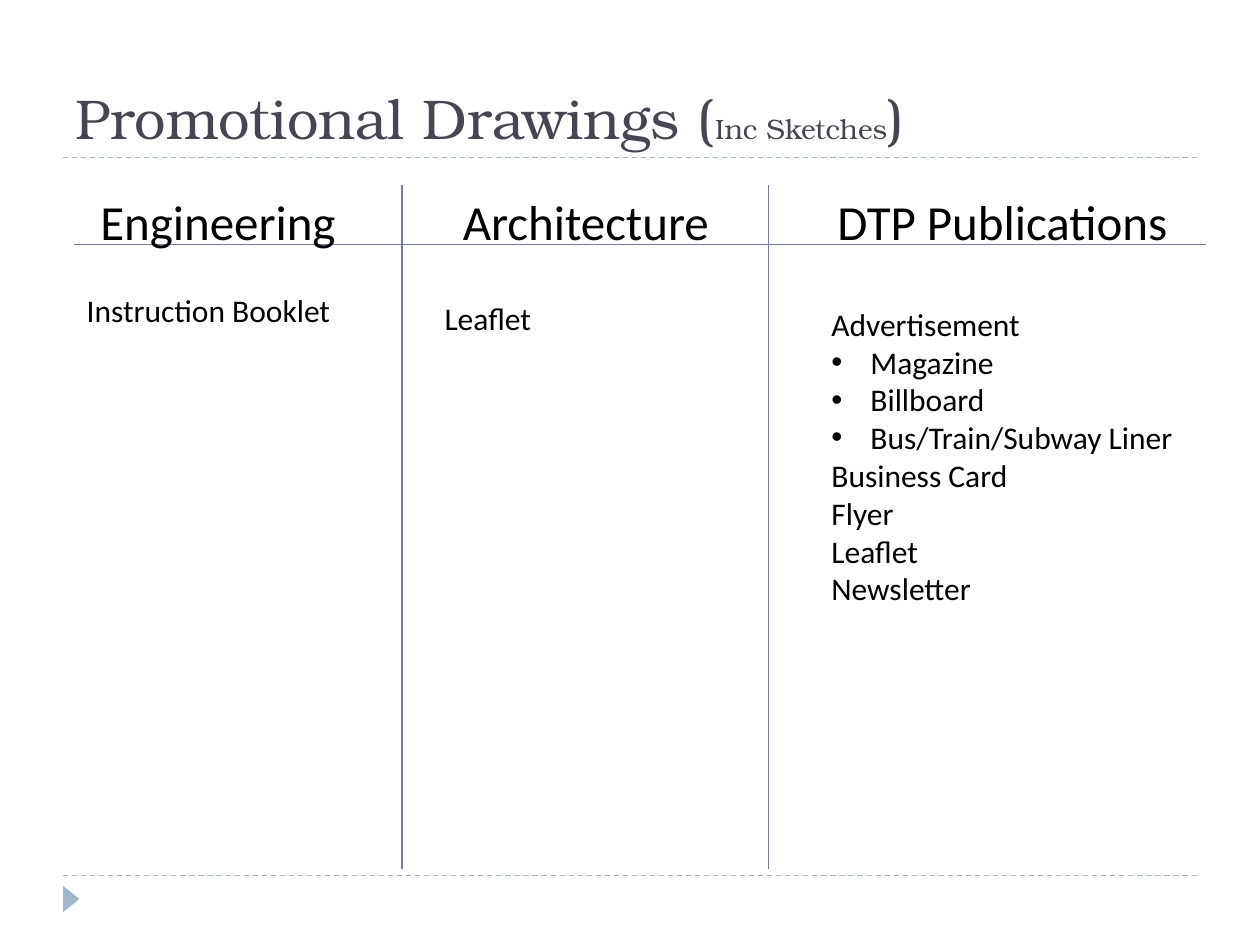
from lxml import etree
from pptx import Presentation
from pptx.dml.color import RGBColor
from pptx.enum.dml import MSO_LINE_DASH_STYLE as Dash
from pptx.enum.shapes import MSO_CONNECTOR, MSO_SHAPE
from pptx.enum.text import MSO_ANCHOR, MSO_AUTO_SIZE, PP_ALIGN
from pptx.oxml.ns import qn
from pptx.util import Inches, Pt

INK = RGBColor(0x00, 0x00, 0x00)
TITLE_INK = RGBColor(0x46, 0x46, 0x53)
RULE = RGBColor(0x72, 0x7C, 0xA3)
ACCENT = RGBColor(0x9F, 0xB8, 0xCD)

TITLE_ONLY = 5
HEADING_TOP, DIVIDER_BOTTOM = 1.47, 6.9

# Heading, its left and width, then the list's left, top, width, height and items
COLUMNS = [
    ("Engineering", 0.43, 2.6, (0.59, 2.26, 2.44, 0.71), ["Instruction Booklet"]),
    ("Architecture", 3.35, 2.6, (3.43, 2.32, 2.44, 0.71), ["Leaflet"]),
    ("DTP Publications", 6.34, 3.23, (6.5, 2.37, 3.31, 2.83),
     ["Advertisement", "• Magazine", "• Billboard", "• Bus/Train/Subway Liner",
      "Business Card", "Flyer", "Leaflet", "Newsletter"]),
]


class SlideBuilder:
    heading_font = "TeX Gyre Bonum"
    body_font = "Calibri"

    def __init__(self, page):
        self.page = page

    def add_span(self, para, text, size, font=body_font, color=INK):
        span = para.add_run()
        span.text = text
        for name, value in {"name": font, "size": Pt(size)}.items():
            setattr(span.font, name, value)
        span.font.color.rgb = color

    def add_title(self, spans, left, top, width, height):
        title = self.page.shapes.title
        place = {"left": left, "top": top, "width": width, "height": height}
        for name, value in place.items():
            setattr(title, name, Inches(value))
        frame = title.text_frame
        frame.auto_size = MSO_AUTO_SIZE.NONE
        frame.vertical_anchor = MSO_ANCHOR.BOTTOM
        para = frame.paragraphs[0]
        para.alignment = PP_ALIGN.LEFT
        for text, size in spans:
            self.add_span(para, text, size, self.heading_font, TITLE_INK)

    def add_text(self, lines, left, top, width, height, size, align=PP_ALIGN.LEFT):
        """Add one paragraph per line; a line starting with • becomes a bullet."""
        box = self.page.shapes.add_textbox(*map(Inches, (left, top, width, height)))
        frame = box.text_frame
        frame.word_wrap = True
        for index, line in enumerate(lines):
            para = frame.add_paragraph() if index else frame.paragraphs[0]
            para.alignment = align
            if line.startswith("•"):
                self.set_bullet(para)
            self.add_span(para, line.removeprefix("• "), size)

    def set_bullet(self, para, indent=0.31):
        props = para._p.get_or_add_pPr()
        props.set("marL", str(Inches(indent)))
        props.set("indent", str(-Inches(indent)))
        etree.SubElement(props, qn("a:buFont"), typeface="Arial")
        etree.SubElement(props, qn("a:buChar"), char="•")

    def add_line(self, x1, y1, x2, y2, color=RULE, dash=None):
        line = self.page.shapes.add_connector(
            MSO_CONNECTOR.STRAIGHT, *map(Inches, (x1, y1, x2, y2)))
        line.line.color.rgb = color
        line.line.width = Pt(0.75)
        if dash:
            line.line.dash_style = dash
        etree.SubElement(line._element.spPr, qn("a:effectLst"))

    def add_triangle(self, left, top, width, height, rotation):
        triangle = self.page.shapes.add_shape(
            MSO_SHAPE.ISOSCELES_TRIANGLE, *map(Inches, (left, top, width, height)))
        triangle.rotation = rotation
        triangle.shadow.inherit = False
        triangle.fill.solid()
        triangle.fill.fore_color.rgb = ACCENT
        triangle.line.fill.background()


def main():
    deck = Presentation()
    deck.slide_width, deck.slide_height = Inches(10), Inches(7.5)
    builder = SlideBuilder(deck.slides.add_slide(deck.slide_layouts[TITLE_ONLY]))

    for y in (6.95, 1.25):
        builder.add_line(0.5, y, 9.5, y, ACCENT, Dash.DASH)
    builder.add_triangle(0.46, 7.07, 0.21, 0.13, rotation=90)
    builder.add_title(
        [("Promotional Drawings (", 32), ("Inc Sketches", 16), (")", 32)],
        0.5, 0.17, 9, 1.08)

    builder.add_line(0.59, 1.94, 9.57, 1.94)
    for x in (3.19, 6.1):
        builder.add_line(x, HEADING_TOP, x, DIVIDER_BOTTOM)
    for heading, left, width, list_area, items in COLUMNS:
        builder.add_text([heading], left, HEADING_TOP, width, 0.57, 28, PP_ALIGN.CENTER)
        builder.add_text(items, *list_area, 18)

    deck.save("out.pptx")


if __name__ == "__main__":
    main()
